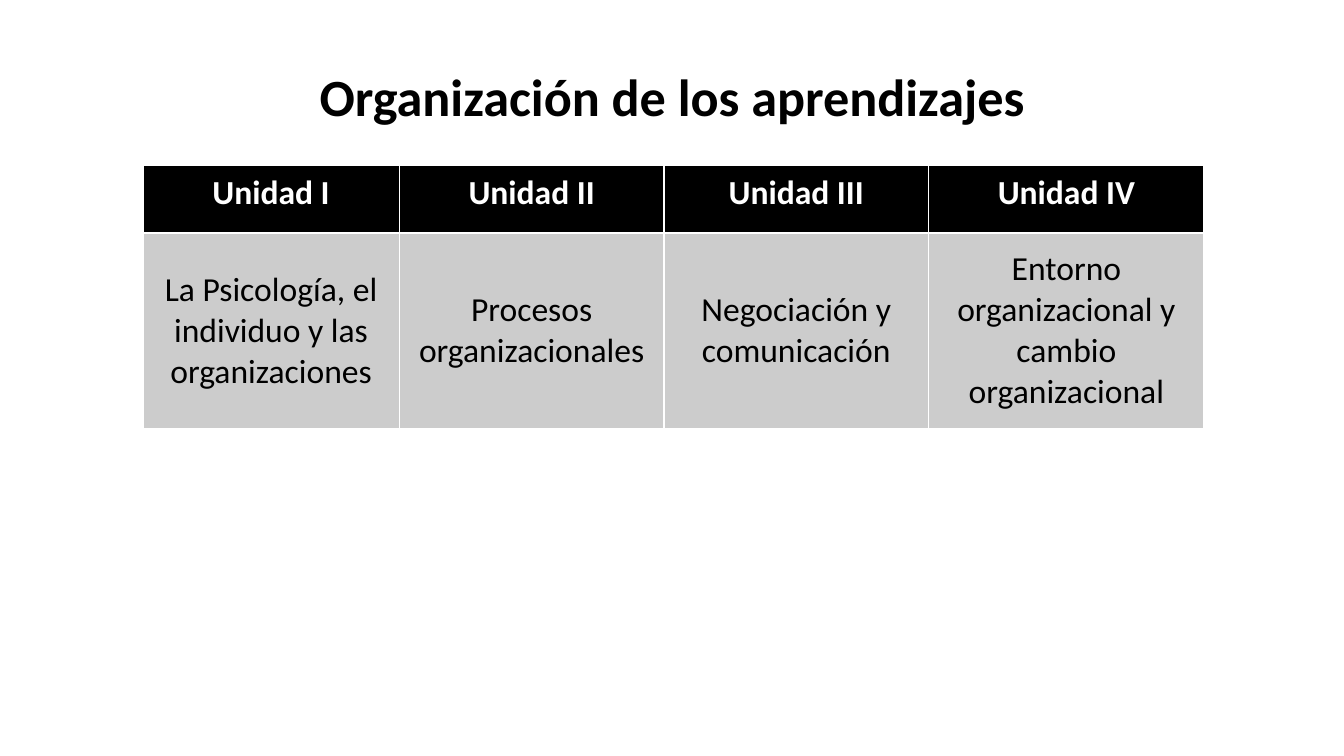
"""Build a slide with a title and a table of the four course units."""
from pptx import Presentation
from pptx.dml.color import RGBColor
from pptx.enum.text import MSO_ANCHOR as Anchor, PP_ALIGN as Align
from pptx.util import Cm, Pt

BLACK = RGBColor(0x00, 0x00, 0x00)
WHITE = RGBColor(0xFF, 0xFF, 0xFF)
GRAY = RGBColor(0xCC, 0xCC, 0xCC)

TITLE = "Organización de los aprendizajes"
UNITS = [
    ("Unidad I", "La Psicología, el individuo y las organizaciones", 4.85),
    ("Unidad II", "Procesos organizacionales", 5),
    ("Unidad III", "Negociación y comunicación", 5),
    ("Unidad IV", "Entorno organizacional y cambio organizacional", 5.21),
]
ROW_HEIGHTS = (1.27, 3.71)


def write(tf, text, size=18, color=BLACK, bold=False, spacing=None):
    tf.word_wrap = True
    p = tf.paragraphs[0]
    p.alignment = Align.CENTER
    p.line_spacing = spacing
    r = p.add_run()
    r.text = text
    r.font.name = "Calibri"
    r.font.size = Pt(size)
    r.font.bold = bold
    r.font.color.rgb = color


def fill_cell(cell, text, fill, anchor, **fmt):
    cell.fill.solid()
    cell.fill.fore_color.rgb = fill
    cell.vertical_anchor = anchor
    write(cell.text_frame, text, **fmt)


def main():
    prs = Presentation()
    prs.slide_width, prs.slide_height = Cm(25.4), Cm(14.29)
    s = prs.slides.add_slide(prs.slide_layouts[6])

    title = s.shapes.add_textbox(Cm(1.75), Cm(0.94), Cm(21.9), Cm(1.88))
    title.text_frame.vertical_anchor = Anchor.MIDDLE
    write(title.text_frame, TITLE, size=28, bold=True, spacing=0.9)

    width = sum(unit[2] for unit in UNITS)
    table = s.shapes.add_table(
        len(ROW_HEIGHTS), len(UNITS),
        Cm(2.7), Cm(3.13), Cm(width), Cm(sum(ROW_HEIGHTS)),
    ).table
    for row, height in zip(table.rows, ROW_HEIGHTS):
        row.height = Cm(height)
    for i, (name, topic, col_width) in enumerate(UNITS):
        table.columns[i].width = Cm(col_width)
        fill_cell(table.cell(0, i), name, BLACK, Anchor.TOP,
                  color=WHITE, bold=True)
        fill_cell(table.cell(1, i), topic, GRAY, Anchor.MIDDLE)

    prs.save("out.pptx")


if __name__ == "__main__":
    main()
